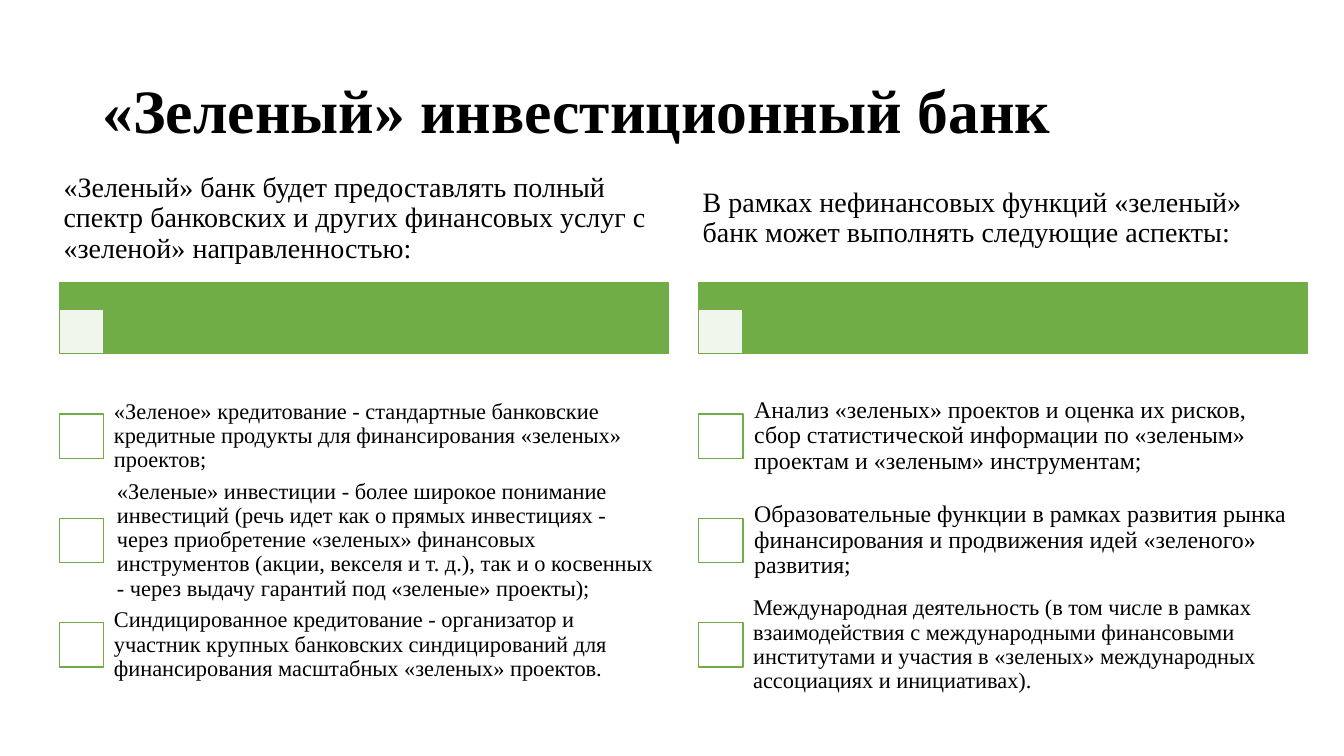
"""Build a slide with two columns on the functions of a green investment bank."""
from dataclasses import dataclass

from lxml.etree import SubElement
from pptx import Presentation
from pptx.dml.color import RGBColor
from pptx.enum.shapes import MSO_SHAPE
from pptx.enum.text import MSO_ANCHOR
from pptx.oxml.ns import qn
from pptx.slide import Slide
from pptx.util import Inches, Pt

GREEN = RGBColor(0x70, 0xAD, 0x47)
WHITE = RGBColor(0xFF, 0xFF, 0xFF)
BLACK = RGBColor(0x00, 0x00, 0x00)
FONT = "Times New Roman"

LEFT, COL_STEP, COL_W = 0.59, 6.34, 6.04
HEAD_TOP, HEAD_H = 1.53, 1.28
BAR_TOP, BAR_H = 2.8, 0.71
ROW_TOP, ROW_H = 3.81, 1.035
BOX = 0.44
TEXT_INDENT = COL_W - 5.62


@dataclass(frozen=True)
class Item:
    text: str
    size: int = 16
    inset: float = 0.12
    shift: float = 0


@dataclass(frozen=True)
class Column:
    heading: str
    items: tuple[Item, ...]


COLUMNS = (
    Column(
        "«Зеленый» банк будет предоставлять полный спектр банковских и других "
        "финансовых услуг с «зеленой» направленностью:",
        (
            Item("«Зеленое» кредитование - стандартные банковские кредитные продукты "
                 "для финансирования «зеленых» проектов;"),
            Item("«Зеленые» инвестиции - более широкое понимание инвестиций (речь идет "
                 "как о прямых инвестициях - через приобретение «зеленых» финансовых "
                 "инструментов (акции, векселя и т. д.), так и о косвенных - через "
                 "выдачу гарантий под «зеленые» проекты);", shift=0.03),
            Item("Синдицированное кредитование - организатор и участник крупных "
                 "банковских синдицирований для финансирования масштабных «зеленых» "
                 "проектов."),
        ),
    ),
    Column(
        "В рамках нефинансовых функций «зеленый» банк может выполнять следующие аспекты:",
        (
            Item("Анализ «зеленых» проектов и оценка их рисков, сбор статистической "
                 "информации по «зеленым» проектам и «зеленым» инструментам;", 17, 0.13),
            Item("Образовательные функции в рамках развития рынка финансирования и "
                 "продвижения идей «зеленого» развития;", 17, 0.13),
            Item("Международная деятельность (в том числе в рамках взаимодействия с "
                 "международными финансовыми институтами и участия в «зеленых» "
                 "международных ассоциациях и инициативах)."),
        ),
    ),
)


def add_text(slide: Slide, text: str, x: float, y: float, w: float, h: float,
             size: int, inset: tuple[float, float], bold: bool = False) -> None:
    tf = slide.shapes.add_textbox(Inches(x), Inches(y), Inches(w), Inches(h)).text_frame
    tf.word_wrap = True
    tf.vertical_anchor = MSO_ANCHOR.MIDDLE
    tf.margin_left = tf.margin_right = Inches(inset[0])
    tf.margin_top = tf.margin_bottom = Inches(inset[1])
    p = tf.paragraphs[0]
    p.text = text
    p.line_spacing = 0.9
    font = p.runs[0].font
    font.name, font.size, font.bold = FONT, Pt(size), bold
    font.color.rgb = BLACK


def add_rect(slide: Slide, x: float, y: float, w: float, h: float,
             fill: RGBColor, opacity: int = 100) -> None:
    sp = slide.shapes.add_shape(MSO_SHAPE.RECTANGLE, Inches(x), Inches(y), Inches(w), Inches(h))
    sp.shadow.inherit = False
    sp.fill.solid()
    sp.fill.fore_color.rgb = fill
    sp.line.color.rgb = GREEN
    sp.line.width = Pt(1)
    if opacity < 100:
        color = sp.fill._xPr.find(qn("a:solidFill"))[0]
        SubElement(color, qn("a:alpha")).set("val", str(opacity * 1000))


def add_column(slide: Slide, column: Column, x: float) -> None:
    add_rect(slide, x, BAR_TOP, COL_W, BAR_H, GREEN)
    add_rect(slide, x, BAR_TOP + BAR_H - BOX, BOX, BOX, WHITE, 90)
    add_text(slide, column.heading, x, HEAD_TOP, COL_W, HEAD_H, 20, (0.04, 0.03))
    for row, item in enumerate(column.items):
        y = ROW_TOP + row * ROW_H
        add_rect(slide, x, y + (ROW_H - BOX) / 2, BOX, BOX, WHITE)
        add_text(slide, item.text, x + TEXT_INDENT + item.shift, y, COL_W - TEXT_INDENT,
                 ROW_H, item.size, (item.inset, item.inset))


def main() -> None:
    prs = Presentation()
    prs.slide_width, prs.slide_height = Inches(13.33), Inches(7.5)
    slide = prs.slides.add_slide(prs.slide_layouts[6])
    add_text(slide, "«Зеленый» инвестиционный банк", 0.92, 0.4, 11.5, 1.45, 44,
             (0.1, 0.05), bold=True)
    for index, column in enumerate(COLUMNS):
        add_column(slide, column, LEFT + index * COL_STEP)
    prs.save("out.pptx")


if __name__ == "__main__":
    main()
